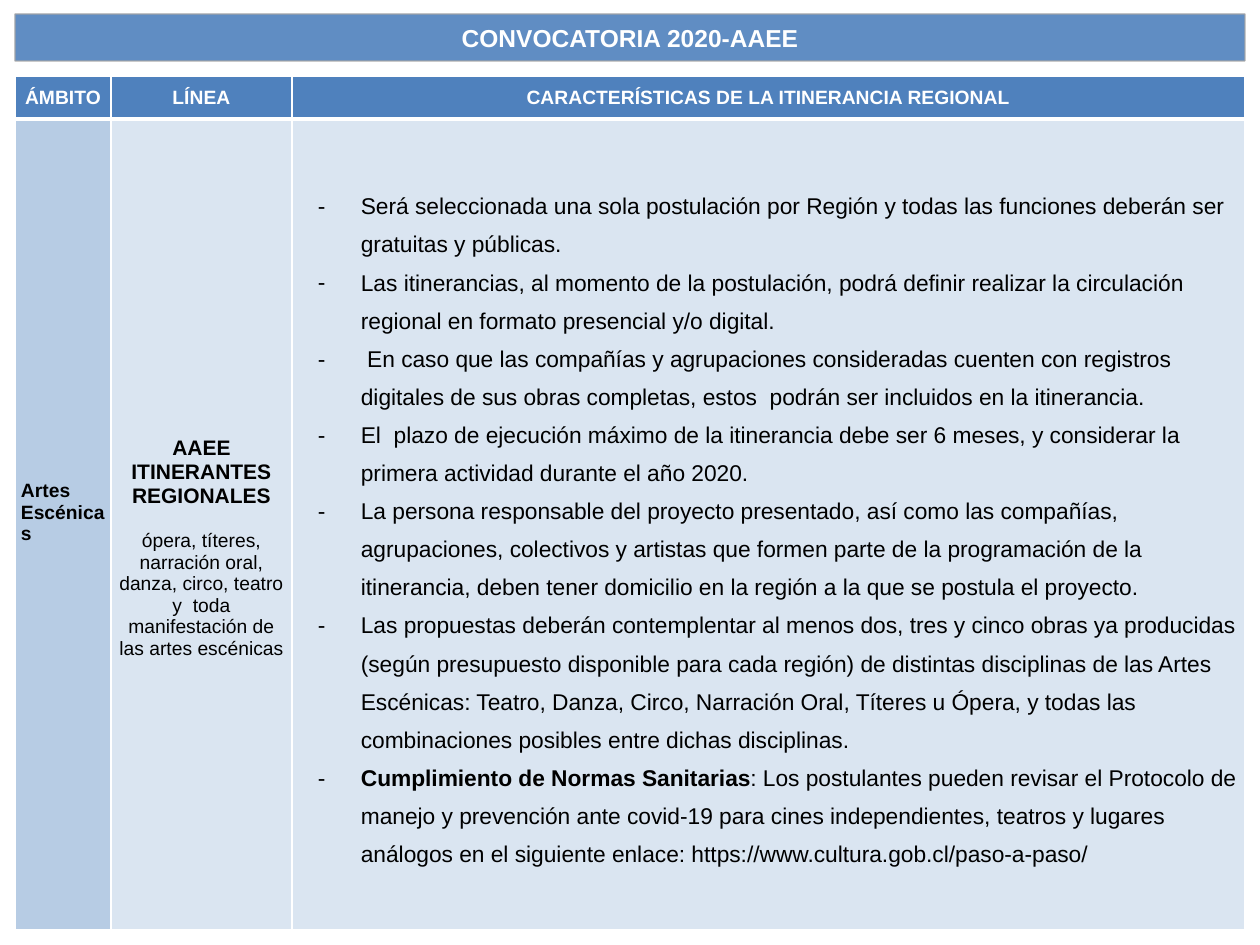
from lxml.etree import SubElement
from pptx import Presentation
from pptx.dml.color import RGBColor
from pptx.enum.text import MSO_ANCHOR as Anchor, MSO_AUTO_SIZE as AutoSize, PP_ALIGN as Align
from pptx.oxml.ns import qn
from pptx.util import Pt

EMU_PER_PX = 914400 // 126
FONT = "Arial"
WHITE = RGBColor(0xFF, 0xFF, 0xFF)
BLACK = RGBColor(0x00, 0x00, 0x00)
GRAY = RGBColor(0xA5, 0xA5, 0xA5)
BLUE = RGBColor(0x4F, 0x81, 0xBD)
MID_BLUE = RGBColor(0xB7, 0xCC, 0xE4)
PALE_BLUE = RGBColor(0xDA, 0xE5, 0xF1)

HEADERS = ["ÁMBITO", "LÍNEA", "CARACTERÍSTICAS DE LA ITINERANCIA REGIONAL"]
COLUMN_WIDTHS = [96, 181, 953]
ROW_HEIGHTS = [43, 811]
CELL_MARGIN = 6
DISCIPLINES = ("ópera, títeres, narración oral, danza, circo, teatro y  toda "
               "manifestación de las artes escénicas")
# Each feature is a list of (text, bold) runs.
FEATURES = [
    [("Será seleccionada una sola postulación por Región y todas las funciones deberán "
      "ser gratuitas y públicas.", False)],
    [("Las itinerancias, al momento de la postulación, podrá definir realizar la "
      "circulación regional en formato presencial y/o digital.", False)],
    [(" En caso que las compañías y agrupaciones consideradas cuenten con registros "
      "digitales de sus obras completas, estos  podrán ser incluidos en la itinerancia.", False)],
    [("El  plazo de ejecución máximo de la itinerancia debe ser 6 meses, y considerar la "
      "primera actividad durante el año 2020.", False)],
    [("La persona responsable del proyecto presentado, así como las compañías, "
      "agrupaciones, colectivos y artistas que formen parte de la programación de la "
      "itinerancia, deben tener domicilio en la región a la que se postula el proyecto.", False)],
    [("Las propuestas deberán contemplentar al menos dos, tres y cinco obras ya producidas "
      "(según presupuesto disponible para cada región) de distintas disciplinas de las Artes "
      "Escénicas: Teatro, Danza, Circo, Narración Oral, Títeres u Ópera, y todas las "
      "combinaciones posibles entre dichas disciplinas.", False)],
    [("Cumplimiento de Normas Sanitarias", True),
     (": Los postulantes pueden revisar el Protocolo de manejo y prevención ante covid-19 "
      "para cines independientes, teatros y lugares análogos en el siguiente enlace: "
      "https://www.cultura.gob.cl/paso-a-paso/", False)],
]


def px(length):
    return length * EMU_PER_PX


def add_run(paragraph, text, size, color=BLACK, bold=False):
    run = paragraph.add_run()
    run.text = text
    run.font.name = FONT
    run.font.size = Pt(size)
    run.font.bold = bold
    run.font.color.rgb = color


def add_paragraph(text_frame, runs, size, color=BLACK, align=Align.LEFT):
    """Add a paragraph of (text, bold) runs, filling the empty first one if there is one."""
    first = text_frame.paragraphs[0]
    paragraph = text_frame.add_paragraph() if first.runs else first
    paragraph.alignment = align
    for text, bold in runs:
        add_run(paragraph, text, size, color, bold)
    return paragraph


def set_dash_bullet(paragraph, indent, hanging):
    properties = paragraph._p.get_or_add_pPr()
    properties.set("marL", str(px(indent)))
    properties.set("indent", str(-px(hanging)))
    bullet_color = SubElement(properties, qn("a:buClr"))
    SubElement(bullet_color, qn("a:srgbClr"), val=str(BLACK))
    SubElement(properties, qn("a:buFont"), typeface=FONT)
    SubElement(properties, qn("a:buChar"), char="-")


def set_borders(cell, top, bottom):
    """Draw white borders; the sides are 1 pt wide."""
    properties = cell._tc.get_or_add_tcPr()
    sides = {"L": 1, "R": 1, "T": top, "B": bottom}
    for index, (side, width) in enumerate(sides.items()):
        line = SubElement(properties, qn(f"a:ln{side}"), w=str(Pt(width)))
        fill = SubElement(line, qn("a:solidFill"))
        SubElement(fill, qn("a:srgbClr"), val=str(WHITE))
        properties.insert(index, line)


def format_cell(cell, color, top=1, bottom=1):
    cell.fill.solid()
    cell.fill.fore_color.rgb = color
    cell.vertical_anchor = Anchor.MIDDLE
    cell.margin_left = cell.margin_right = px(CELL_MARGIN)
    cell.margin_top = cell.margin_bottom = px(CELL_MARGIN)
    set_borders(cell, top, bottom)


def format_title(title):
    title.left, title.top, title.width, title.height = px(15), px(14), px(1230), px(47)
    title.fill.solid()
    title.fill.fore_color.rgb = BLUE
    title.line.color.rgb = GRAY
    title.line.width = Pt(0.75)
    for color in title.element.iter(qn("a:srgbClr")):
        SubElement(color, qn("a:alpha"), val="90000")
    text_frame = title.text_frame
    text_frame.auto_size = AutoSize.NONE
    text_frame.word_wrap = True
    text_frame.vertical_anchor = Anchor.MIDDLE
    add_paragraph(text_frame, [("CONVOCATORIA 2020-AAEE", True)], 14, WHITE, Align.CENTER)


def fill_scope(cell):
    cell.margin_bottom = px(CELL_MARGIN + 24)
    add_paragraph(cell.text_frame, [("Artes Escénicas", True)], 11)


def fill_line(cell):
    cell.margin_top = px(CELL_MARGIN + 47)
    for text in ("AAEE ITINERANTES", "REGIONALES"):
        add_paragraph(cell.text_frame, [(text, True)], 12, align=Align.CENTER)
    disciplines = add_paragraph(cell.text_frame, [(DISCIPLINES, False)], 11, align=Align.CENTER)
    disciplines.space_before = px(23)


def fill_features(cell):
    for runs in FEATURES:
        paragraph = add_paragraph(cell.text_frame, runs, 13)
        paragraph.line_spacing = 1.5
        set_dash_bullet(paragraph, indent=63, hanging=43)


def add_call_table(slide):
    frame = slide.shapes.add_table(len(ROW_HEIGHTS), len(COLUMN_WIDTHS), px(15), px(76),
                                   px(sum(COLUMN_WIDTHS)), px(sum(ROW_HEIGHTS)))
    table = frame.table
    table.horz_banding = False
    for column, width in zip(table.columns, COLUMN_WIDTHS):
        column.width = px(width)
    for row, height in zip(table.rows, ROW_HEIGHTS):
        row.height = px(height)

    body_colors = [MID_BLUE, PALE_BLUE, PALE_BLUE]
    body_fillers = [fill_scope, fill_line, fill_features]
    for index, header in enumerate(HEADERS):
        header_cell, body_cell = table.cell(0, index), table.cell(1, index)
        format_cell(header_cell, BLUE, bottom=3)
        add_paragraph(header_cell.text_frame, [(header, True)], 11, WHITE, Align.CENTER)
        format_cell(body_cell, body_colors[index], top=3)
        body_fillers[index](body_cell)


def main():
    presentation = Presentation()
    presentation.slide_width, presentation.slide_height = px(1260), px(945)
    slide = presentation.slides.add_slide(presentation.slide_layouts[5])
    format_title(slide.shapes.title)
    add_call_table(slide)
    presentation.save("out.pptx")


if __name__ == "__main__":
    main()
